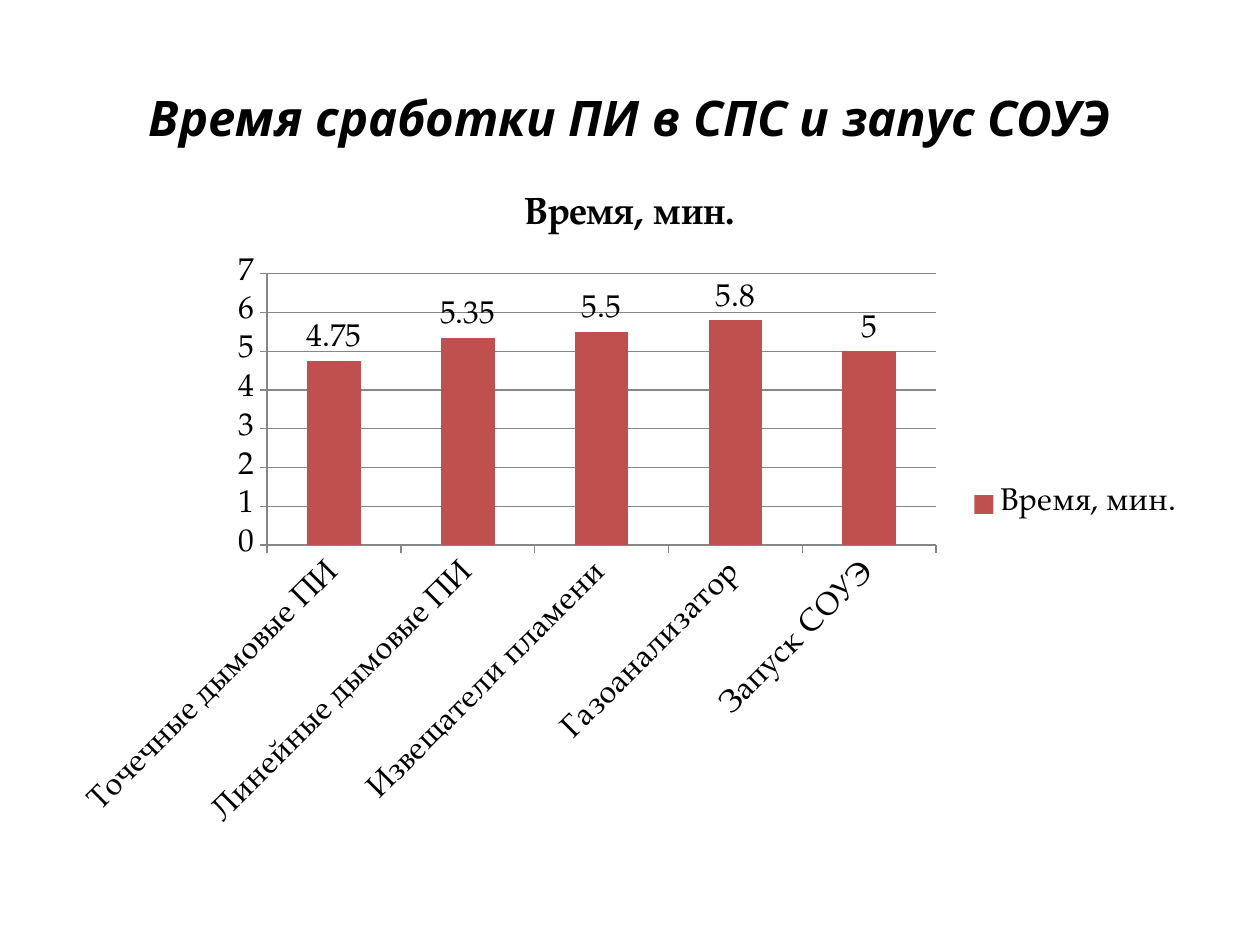
import pptx
import pptx.chart.data
import pptx.dml.color
import pptx.enum.chart
import pptx.enum.text
import pptx.oxml
import pptx.util

HEADING = "Время сработки ПИ в СПС и запус СОУЭ"
SERIES = "Время, мин."
TIMES = {
    "Точечные дымовые ПИ": 4.75,
    "Линейные дымовые ПИ": 5.35,
    "Извещатели пламени": 5.5,
    "Газоанализатор": 5.8,
    "Запуск СОУЭ": 5,
}

# left, top, width, height in px
PAGE = (0, 0, 1260, 945)
HEADING_AREA = (63, 38, 1134, 158)
CHART_AREA = (63, 165, 1134, 679)
PLOT_AREA = (267, 273, 674, 274)


def rgb(value):
    return pptx.dml.color.RGBColor.from_string(value)


THEME = {
    "bar": rgb("C0504D"),
    "grid": rgb("868686"),
    "line_width": pptx.util.Pt(0.75),
    "heading": {"name": "Open Sans", "size": pptx.util.Pt(28), "bold": True, "italic": True},
    "chart": {"name": "TeX Gyre Pagella", "size": pptx.util.Pt(18)},
    "chart_title": {"name": "TeX Gyre Pagella", "size": pptx.util.Pt(21.6), "bold": True},
    "ink": rgb("000000"),
}


def emu(area):
    return [pptx.util.Emu(px * 914400 // 126) for px in area]


def style(font, kind):
    for name, value in THEME[kind].items():
        setattr(font, name, value)
    font.color.rgb = THEME["ink"]


def style_line(line):
    line.color.rgb = THEME["grid"]
    line.width = THEME["line_width"]


def add_heading(page):
    box = page.shapes.add_textbox(*emu(HEADING_AREA))
    frame = box.text_frame
    frame.word_wrap = True
    frame.vertical_anchor = pptx.enum.text.MSO_ANCHOR.MIDDLE
    para = frame.paragraphs[0]
    para.alignment = pptx.enum.text.PP_ALIGN.CENTER
    span = para.add_run()
    span.text = HEADING
    style(span.font, "heading")


def fix_plot_area(chart):
    """Pin the inner plot rectangle as fractions of the chart frame."""
    left, top, width, height = CHART_AREA
    x, y, w, h = PLOT_AREA
    places = {"x": (x - left) / width, "y": (y - top) / height, "w": w / width, "h": h / height}
    modes = "".join(f'<c:{key}Mode val="edge"/>' for key in "xy")
    values = "".join(f'<c:{key} val="{value:.2f}"/>' for key, value in places.items())
    layout = pptx.oxml.parse_xml(
        '<c:layout xmlns:c="http://schemas.openxmlformats.org/drawingml/2006/chart">'
        f'<c:manualLayout><c:layoutTarget val="inner"/>{modes}{values}</c:manualLayout></c:layout>'
    )
    plot_area = chart.element.xpath("./c:chart/c:plotArea")[0]
    for old in plot_area.xpath("./c:layout"):
        plot_area.remove(old)
    plot_area.insert(0, layout)


def add_time_chart(page):
    data = pptx.chart.data.CategoryChartData()
    data.categories = list(TIMES)
    data.add_series(SERIES, list(TIMES.values()))
    kind = pptx.enum.chart.XL_CHART_TYPE.COLUMN_CLUSTERED
    chart = page.shapes.add_chart(kind, *emu(CHART_AREA), data).chart
    style(chart.font, "chart")

    chart.has_title = True
    title = chart.chart_title.text_frame.paragraphs[0].add_run()
    title.text = SERIES
    style(title.font, "chart_title")

    chart.has_legend = True
    chart.legend.position = pptx.enum.chart.XL_LEGEND_POSITION.RIGHT
    chart.legend.include_in_layout = False
    style(chart.legend.font, "chart")

    for axis in (chart.category_axis, chart.value_axis):
        axis.major_tick_mark = pptx.enum.chart.XL_TICK_MARK.OUTSIDE
        style_line(axis.format.line)
        style(axis.tick_labels.font, "chart")
    names = chart.element.xpath(".//c:catAx/c:txPr/a:bodyPr")[0]
    names.set("rot", "-2700000")
    names.set("vert", "horz")
    scale = chart.value_axis
    scale.minimum_scale, scale.maximum_scale, scale.major_unit = 0, 7, 1
    scale.has_major_gridlines = True
    style_line(scale.major_gridlines.format.line)

    plot = chart.plots[0]
    plot.gap_width = 150
    plot.vary_by_categories = False
    fill = plot.series[0].format.fill
    fill.solid()
    fill.fore_color.rgb = THEME["bar"]
    labels = plot.series[0].data_labels
    labels.show_value = True
    labels.position = pptx.enum.chart.XL_LABEL_POSITION.OUTSIDE_END
    style(labels.font, "chart")
    fix_plot_area(chart)


def main():
    deck = pptx.Presentation()
    deck.slide_width, deck.slide_height = emu(PAGE)[2:]
    page = deck.slides.add_slide(deck.slide_layouts[6])
    add_heading(page)
    add_time_chart(page)
    deck.save("out.pptx")


if __name__ == "__main__":
    main()
